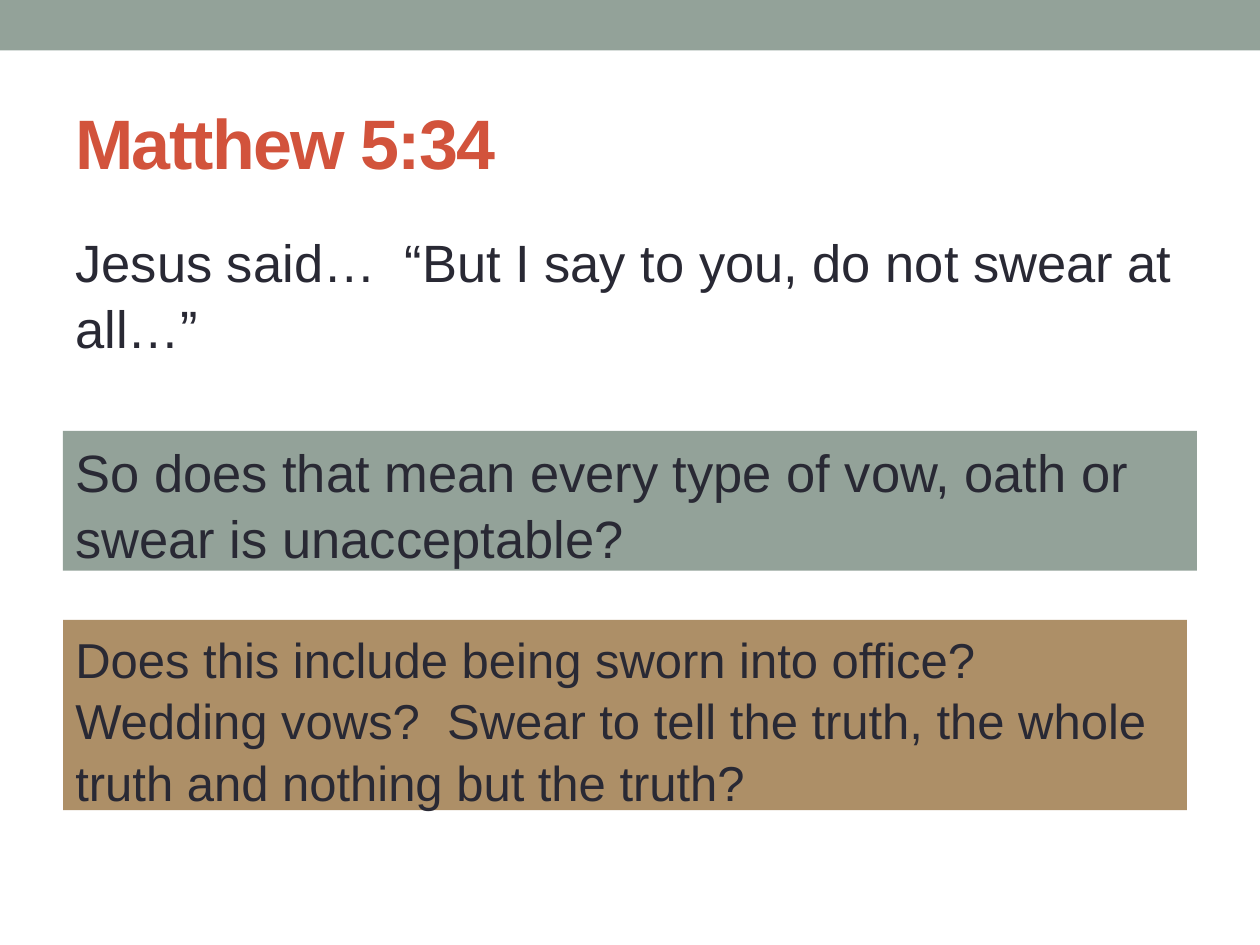
from pptx import Presentation
from pptx.dml.color import RGBColor
from pptx.enum.shapes import MSO_SHAPE
from pptx.enum.text import MSO_ANCHOR, PP_ALIGN
from pptx.util import Pt

RECTANGLE = MSO_SHAPE.RECTANGLE
TOP, MIDDLE = MSO_ANCHOR.TOP, MSO_ANCHOR.MIDDLE
LEFT = PP_ALIGN.LEFT

THEME = {
    "font": "Arial",
    "sage": RGBColor.from_string("93A299"),
    "tan": RGBColor.from_string("AD8F67"),
    "red": RGBColor.from_string("D2533C"),
    "ink": RGBColor.from_string("292934"),
    "title": Pt(40),
    "verse": Pt(30),
    "examples": Pt(28),
}
MARGIN, WIDTH = 36, 648


def add_band(left, top, width, height, color):
    band = slide.shapes.add_shape(RECTANGLE, Pt(left), Pt(top), Pt(width), Pt(height))
    band.shadow.inherit = False
    band.fill.solid()
    band.fill.fore_color.rgb = color
    band.line.fill.background()
    return band


def write(holder, text, size, color, anchor=TOP, spacing=1.05, bold=False):
    frame = holder.text_frame
    frame.word_wrap = True
    frame.vertical_anchor = anchor
    paragraph = frame.paragraphs[0]
    paragraph.alignment = LEFT
    paragraph.line_spacing = spacing
    run = paragraph.add_run()
    run.text = text
    run.font.color.rgb = color
    for attribute, value in {"name": THEME["font"], "size": size, "bold": bold}.items():
        setattr(run.font, attribute, value)
    return run


prs = Presentation()
prs.slide_width, prs.slide_height = Pt(720), Pt(540)
slide = prs.slides.add_slide(prs.slide_layouts[6])

# Top band
add_band(0, 0, 720, 28.8, THEME["sage"])

# Title, with slightly tightened letters
title = slide.shapes.add_textbox(Pt(MARGIN), Pt(41.76), Pt(WIDTH), Pt(77.76))
reference = write(title, "Matthew 5:34", THEME["title"], THEME["red"],
                  anchor=MIDDLE, spacing=1.0, bold=True)
reference.font._element.set("spc", "-100")

# Verse
verse = slide.shapes.add_textbox(Pt(MARGIN), Pt(126), Pt(WIDTH), Pt(48.24))
write(verse, "Jesus said…  “But I say to you, do not swear at all…”",
      THEME["verse"], THEME["ink"])

# Questions on coloured bands
questions = [
    ("So does that mean every type of vow, oath or swear is unacceptable?",
     246.24, WIDTH, 79.92, "sage", "verse"),
    ("Does this include being sworn into office?  Wedding vows?  "
     "Swear to tell the truth, the whole truth and nothing but the truth?",
     354.24, 642.24, 108.72, "tan", "examples"),
]
for question, top, width, height, fill, size in questions:
    band = add_band(MARGIN, top, width, height, THEME[fill])
    write(band, question, THEME[size], THEME["ink"])

prs.save("out.pptx")
